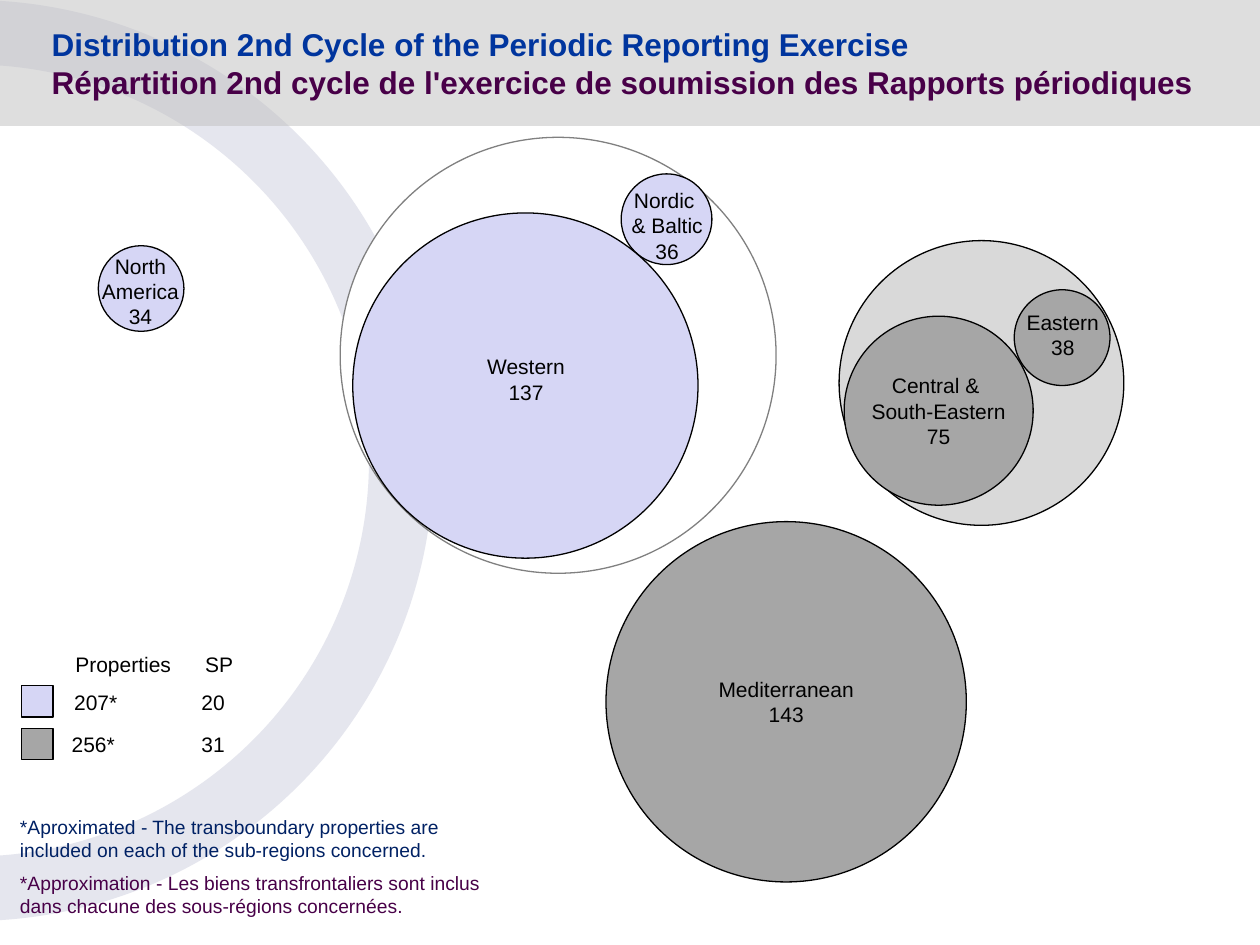
import pptx
import pptx.util
import pptx.dml.color
import pptx.enum.shapes
import pptx.enum.text
import lxml.etree

Inches, Pt = pptx.util.Inches, pptx.util.Pt
KIND = pptx.enum.shapes.MSO_SHAPE
ALIGN = pptx.enum.text.PP_ALIGN

COLORS = {
    "black": "000000", "white": "FFFFFF", "edge": "808080",
    "ring": "E5E6EE", "band": "C0C0C0", "pale": "D9D9D9",
    "lilac": "D6D6F5", "gray": "A6A6A6",
    "blue": "00359E", "navy": "002164", "plum": "480048",
}

TITLE = [
    ("Distribution 2nd Cycle of the Periodic Reporting Exercise", "blue"),
    ("Répartition 2nd cycle de l'exercice de soumission des Rapports périodiques", "plum"),
]

# Left, top, diameter, fill, line
CIRCLES = [
    (6.66, 1.91, 2.26, "pale", "black"),
    (2.7, 1.09, 3.46, "white", "edge"),
    (0.78, 1.95, 0.68, "lilac", "black"),
    (4.93, 1.38, 0.72, "lilac", "black"),
    (2.8, 1.69, 2.74, "lilac", "black"),
    (4.81, 4.14, 2.86, "gray", "black"),
    (6.7, 2.51, 1.5, "gray", "black"),
    (8.05, 2.3, 0.76, "gray", "black"),
]

# Text, left, top, width, height
LABELS = [
    ("North America\v34", 0.49, 1.96, 1.25, 0.71),
    ("Nordic \v& Baltic\v36", 4.67, 1.44, 1.25, 0.71),
    ("Eastern\v38", 8, 2.41, 0.87, 0.5),
    ("Western\v137", 3.55, 2.76, 1.25, 0.5),
    ("Central & \vSouth-Eastern\v75", 6.7, 2.91, 1.5, 0.71),
    ("Mediterranean\v143", 5.45, 5.32, 1.58, 0.5),
]

# Legend heads, then rows: fill, top, left of count, count, SP
HEADS = [("Properties", 0.5), ("SP", 1.53)]
ROWS = [("lilac", 5.44, 0.49, "207*", "20"), ("gray", 5.78, 0.47, "256*", "31")]

NOTES = [
    ("*Aproximated - The transboundary properties are included "
     "on each of the sub-regions concerned.", "navy"),
    ("*Approximation - Les biens transfrontaliers sont inclus "
     "dans chacune des sous-régions concernées.", "plum"),
]


def tint(name):
    return pptx.dml.color.RGBColor.from_string(COLORS[name])


def style(font, size, color, bold=False):
    font.name, font.size, font.bold = "Arial", Pt(size), bold
    font.color.rgb = tint(color)


def draw(shapes, kind, box, fill, line=None):
    shape = shapes.add_shape(kind, *map(Inches, box))
    shape.shadow.inherit = False
    shape.fill.solid()
    shape.fill.fore_color.rgb = tint(fill)
    if line:
        shape.line.color.rgb = tint(line)
        shape.line.width = Pt(0.75)
    else:
        shape.line.fill.background()
    return shape


def write(shapes, box, paras, size=12, align=ALIGN.LEFT):
    frame = shapes.add_textbox(*map(Inches, box)).text_frame
    frame.word_wrap = True
    for i, (text, color) in enumerate(paras):
        para = frame.add_paragraph() if i else frame.paragraphs[0]
        para.text = text
        para.alignment = align
        if i:
            para.space_before = Pt(size / 2)
        style(para.font, size, color)


def head(slide):
    title = slide.shapes.title
    # Bring the band in front of the ring
    slide.shapes._spTree.append(title._element)
    title.left, title.top, title.width, title.height = map(Inches, (0, 0, 10, 1))
    title.fill.solid()
    title.fill.fore_color.rgb = tint("band")
    color = title._element.spPr.find(".//" + pptx.oxml.ns.qn("a:srgbClr"))
    lxml.etree.SubElement(color, pptx.oxml.ns.qn("a:alpha"), val="51000")
    frame = title.text_frame
    frame.auto_size = pptx.enum.text.MSO_AUTO_SIZE.NONE
    frame.vertical_anchor = pptx.enum.text.MSO_ANCHOR.MIDDLE
    frame.margin_left, frame.margin_right = Inches(0.41), Inches(0.1)
    frame.margin_top = frame.margin_bottom = Inches(0.2)
    para = frame.paragraphs[0]
    para.alignment = ALIGN.LEFT
    for i, (text, color) in enumerate(TITLE):
        if i:
            para.add_line_break()
        run = para.add_run()
        run.text = text
        style(run.font, 18, color, True)


def main():
    deck = pptx.Presentation()
    deck.slide_width, deck.slide_height = Inches(10), Inches(7.5)
    slide = deck.slides.add_slide(deck.slide_layouts[5])
    shapes = slide.shapes

    # Background ring and title band
    ring = draw(shapes, KIND.DONUT, (-3.9, 0, 7.34, 7.31), "ring")
    ring.adjustments[0] = 0.07
    head(slide)

    # Regions
    for left, top, size, fill, line in CIRCLES:
        draw(shapes, KIND.OVAL, (left, top, size, size), fill, line)
    for text, *box in LABELS:
        write(shapes, box, [(text, "black")], align=ALIGN.CENTER)

    # Legend
    for text, left in HEADS:
        write(shapes, (left, 5.12, 1.06, 0.3), [(text, "black")])
    for fill, top, left, count, plans in ROWS:
        draw(shapes, KIND.RECTANGLE, (0.17, top, 0.25, 0.25), fill, "black")
        for text, x in ((count, left), (plans, 1.5)):
            write(shapes, (x, top - 0.02, 0.69, 0.3), [(text, "black")])

    # Footnotes
    write(shapes, (0.06, 6.42, 4.11, 0.93), NOTES, size=11)
    deck.save("out.pptx")


if __name__ == "__main__":
    main()
